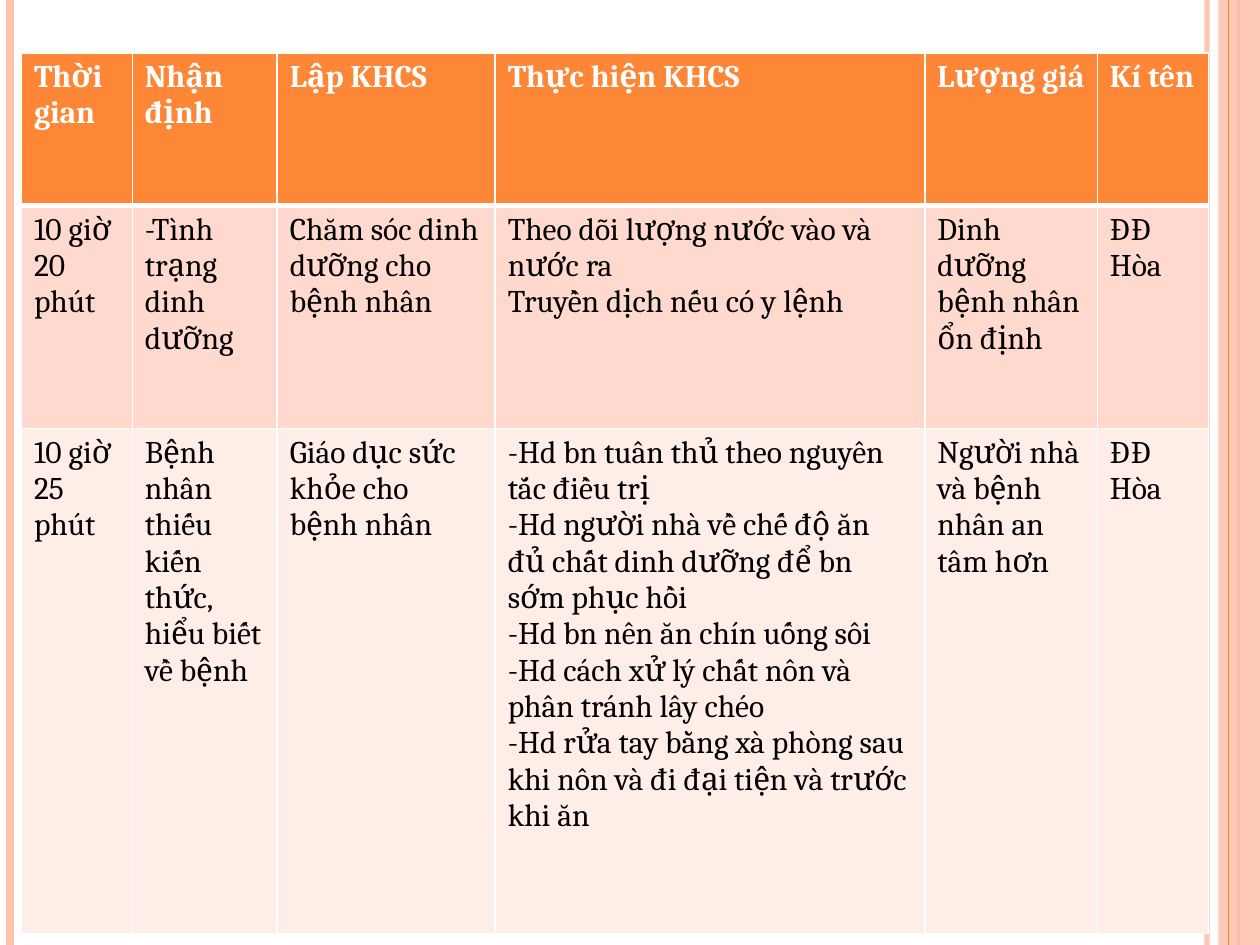
from lxml import etree
from pptx import Presentation
from pptx.dml.color import RGBColor
from pptx.enum.shapes import MSO_CONNECTOR, MSO_SHAPE
from pptx.oxml.ns import qn
from pptx.util import Inches, Pt

STRAIGHT = MSO_CONNECTOR.STRAIGHT
RECTANGLE = MSO_SHAPE.RECTANGLE

ORANGE = RGBColor(0xFE, 0x86, 0x37)
PEACH = RGBColor(0xFE, 0xC3, 0xAE)
ROSE = RGBColor(0xFF, 0xD9, 0xCE)
PALE = RGBColor(0xFF, 0xED, 0xE8)
WHITE = RGBColor(0xFF, 0xFF, 0xFF)
BLACK = RGBColor(0, 0, 0)

SLIDE_W, SLIDE_H = 10, 7.5

# Care plan content: each cell may hold several paragraphs, split by line breaks
CARE_PLAN = [
    ["Thời gian", "Nhận định", "Lập KHCS", "Thực hiện KHCS", "Lượng giá", "Kí tên"],
    ["10 giờ 20 phút",
     "-Tình trạng dinh dưỡng",
     "Chăm sóc dinh dưỡng cho bệnh nhân",
     "Theo dõi lượng nước vào và nước ra\n"
     "Truyền dịch nếu có y lệnh",
     "Dinh dưỡng bệnh nhân ổn định",
     "ĐĐ Hòa"],
    ["10 giờ 25 phút",
     "Bệnh nhân thiếu kiến thức, hiểu biết về bệnh",
     "Giáo dục sức khỏe cho bệnh nhân",
     "-Hd bn tuân thủ theo nguyên tắc điều trị\n"
     "-Hd người nhà về chế độ ăn đủ chất dinh dưỡng để bn sớm phục hồi\n"
     "-Hd bn nên ăn chín uống sôi\n"
     "-Hd cách xử lý chất nôn và phân tránh lây chéo\n"
     "-Hd rửa tay bằng xà phòng sau khi nôn và đi đại tiện và trước khi ăn",
     "Người nhà và bệnh nhân an tâm hơn",
     "ĐĐ Hòa"],
]
TABLE_LEFT, TABLE_TOP = 0.17, 0.42
COLUMN_WIDTHS = [0.88, 1.15, 1.73, 3.41, 1.37, 0.88]
ROW_HEIGHTS = [1.21, 1.77, 4.01]

# One style per row: fill, font, and top and bottom border widths
BODY_FONT = {"name": "Cambria", "size": Pt(18), "bold": False}
HEADER_FONT = {**BODY_FONT, "bold": True}
ROW_STYLES = [
    (ORANGE, HEADER_FONT, WHITE, 1, 3),
    (ROSE, BODY_FONT, BLACK, 3, 1),
    (PALE, BODY_FONT, BLACK, 1, 1),
]

# Vertical stripes: x, colour, width in points, opacity in percent
STRIPES_BEHIND = [(9.58, PEACH, 3, 93), (0.08, PEACH, 4.5, 100), (9.83, ORANGE, 1.5, 100)]
STRIPES_FRONT = [(9.75, ORANGE, 0.75, 100)]
BAND_LEFT, BAND_OPACITY = 9.67, 87


def set_opacity(properties, percent):
    color = next(properties.iter(qn("a:srgbClr")))
    etree.SubElement(color, qn("a:alpha"), val=str(percent * 1000))


def add_stripes(slide, stripes):
    for x, color, width, opacity in stripes:
        stripe = slide.shapes.add_connector(
            STRAIGHT, Inches(x), 0, Inches(x), Inches(SLIDE_H))
        stripe.line.color.rgb = color
        stripe.line.width = Pt(width)
        properties = stripe._element.spPr
        if opacity < 100:
            set_opacity(properties, opacity)
        etree.SubElement(properties, qn("a:effectLst"))


def add_band(slide):
    band = slide.shapes.add_shape(
        RECTANGLE, Inches(BAND_LEFT), 0, Inches(SLIDE_W - BAND_LEFT), Inches(SLIDE_H))
    band.shadow.inherit = False
    band.fill.solid()
    band.fill.fore_color.rgb = PEACH
    set_opacity(band._element.spPr, BAND_OPACITY)
    band.line.fill.background()


def add_borders(cell, top, bottom):
    properties = cell._tc.get_or_add_tcPr()
    for side, width in (("lnL", 1), ("lnR", 1), ("lnT", top), ("lnB", bottom)):
        border = etree.SubElement(properties, qn(f"a:{side}"), w=str(Pt(width)))
        fill = etree.SubElement(border, qn("a:solidFill"))
        etree.SubElement(fill, qn("a:srgbClr"), val=str(WHITE))


def fill_cell(cell, text, style):
    fill_color, font_format, text_color, top, bottom = style
    add_borders(cell, top, bottom)  # borders must precede the fill
    cell.fill.solid()
    cell.fill.fore_color.rgb = fill_color
    cell.text = text
    for paragraph in cell.text_frame.paragraphs:
        for run in paragraph.runs:
            for attribute, value in font_format.items():
                setattr(run.font, attribute, value)
            run.font.color.rgb = text_color


def add_care_plan(slide):
    table = slide.shapes.add_table(
        len(ROW_HEIGHTS), len(COLUMN_WIDTHS), Inches(TABLE_LEFT), Inches(TABLE_TOP),
        Inches(sum(COLUMN_WIDTHS)), Inches(sum(ROW_HEIGHTS))).table
    for column, width in zip(table.columns, COLUMN_WIDTHS):
        column.width = Inches(width)
    for row, height, texts, style in zip(table.rows, ROW_HEIGHTS, CARE_PLAN, ROW_STYLES):
        row.height = Inches(height)
        for cell, text in zip(row.cells, texts):
            fill_cell(cell, text, style)


def main():
    presentation = Presentation()
    presentation.slide_width = Inches(SLIDE_W)
    presentation.slide_height = Inches(SLIDE_H)
    slide = presentation.slides.add_slide(presentation.slide_layouts[6])

    # Decorative edges, then the table on top
    add_stripes(slide, STRIPES_BEHIND)
    add_band(slide)
    add_stripes(slide, STRIPES_FRONT)
    add_care_plan(slide)

    presentation.save("out.pptx")


if __name__ == "__main__":
    main()
